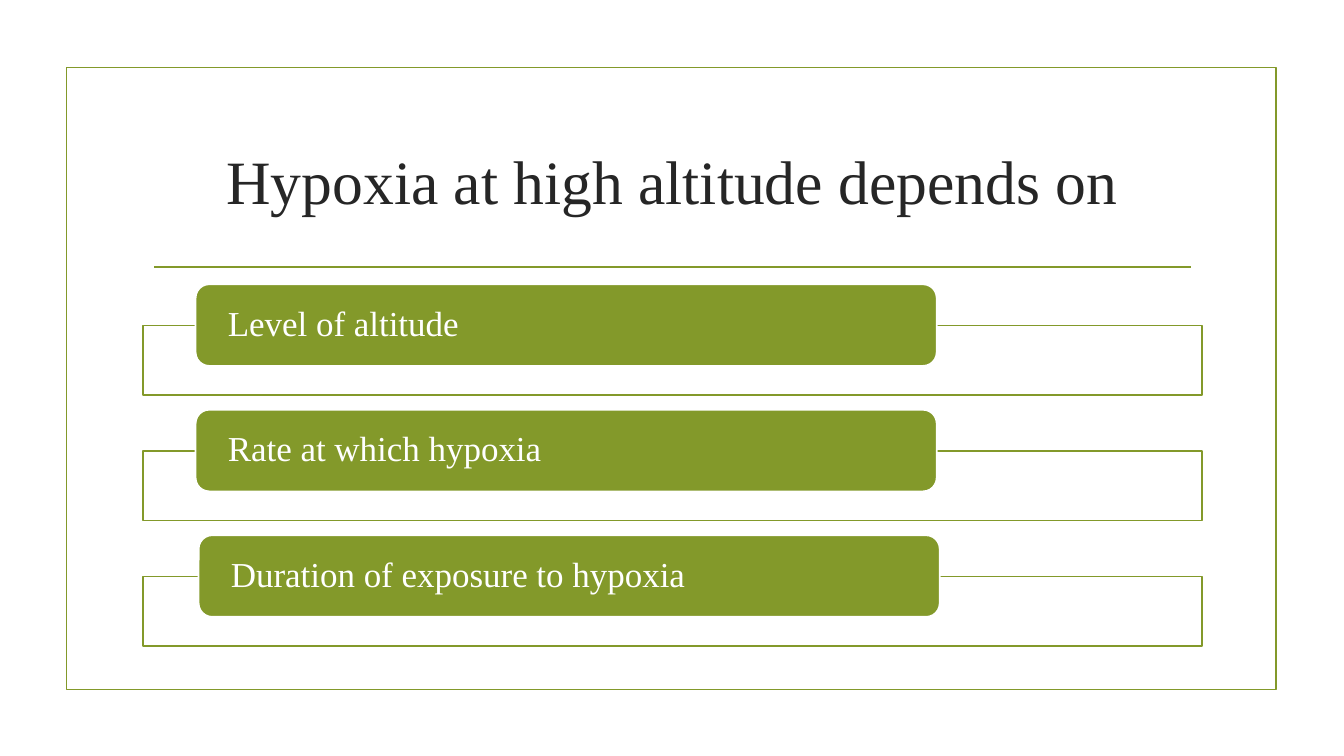
from dataclasses import dataclass

from lxml import etree
from pptx import Presentation
from pptx.dml.color import RGBColor
from pptx.enum import shapes, text
from pptx.oxml import ns
from pptx.util import Inches, Pt


@dataclass(frozen=True)
class Theme:
    """Colours, font and sizes of the slide."""
    green: RGBColor = RGBColor(0x83, 0x99, 0x2A)
    white: RGBColor = RGBColor(0xFF, 0xFF, 0xFF)
    ink: RGBColor = RGBColor(0x26, 0x26, 0x26)
    font: str = "Times New Roman"
    title_size: float = 44
    factor_size: float = 25
    line_width: float = 1.25


THEME = Theme()
CONTENT_LEFT, CONTENT_WIDTH = 1.42, 10.5
FIRST_TOP, ROW_PITCH = 2.82, 1.245
FACTORS = [
    ("Level of altitude", 1.94),
    ("Rate at which hypoxia", 1.94),
    ("Duration of exposure to hypoxia", 1.97),
]


def add_box(slide, kind, left, top, width, height, line, fill=None):
    """Add an outlined preset shape, filled if a colour is given."""
    shape = slide.shapes.add_shape(
        kind, Inches(left), Inches(top), Inches(width), Inches(height))
    shape.shadow.inherit = False
    shape.line.color.rgb = line
    shape.line.width = Pt(THEME.line_width)
    if fill is None:
        shape.fill.background()
    else:
        shape.fill.solid()
        shape.fill.fore_color.rgb = fill
    return shape


def set_opacity(shape, percent):
    """Make the solid fill of a shape partly transparent."""
    color = shape.fill._xPr.find(ns.qn("a:solidFill"))[0]
    etree.SubElement(color, ns.qn("a:alpha"), val=str(percent * 1000))


def write(shape, words, size, color, alignment):
    """Write one vertically centred paragraph into a shape."""
    frame = shape.text_frame
    frame.word_wrap = True
    frame.auto_size = text.MSO_AUTO_SIZE.NONE
    frame.vertical_anchor = text.MSO_ANCHOR.MIDDLE
    paragraph = frame.paragraphs[0]
    paragraph.alignment = alignment
    run = paragraph.add_run()
    run.text = words
    run.font.name = THEME.font
    run.font.size = Pt(size)
    run.font.color.rgb = color
    return paragraph


def add_title(slide, words):
    """Place and fill the title placeholder."""
    title = slide.shapes.title
    title.left, title.top = Inches(CONTENT_LEFT), Inches(1.07)
    title.width, title.height = Inches(CONTENT_WIDTH), Inches(1.43)
    write(title, words, THEME.title_size, THEME.ink, text.PP_ALIGN.CENTER)


def add_rule(slide, left, right, top):
    """Draw a horizontal green line."""
    rule = slide.shapes.add_connector(
        shapes.MSO_CONNECTOR.STRAIGHT,
        Inches(left), Inches(top), Inches(right), Inches(top))
    rule.line.color.rgb = THEME.green
    rule.line.width = Pt(THEME.line_width)
    etree.SubElement(rule._element.spPr, ns.qn("a:effectLst"))


def add_factor(slide, words, left, top):
    """Add a labelled green bar overlapping its outlined panel."""
    panel = add_box(slide, shapes.MSO_SHAPE.RECTANGLE, CONTENT_LEFT, top + 0.41,
                    CONTENT_WIDTH, 0.69, THEME.green, THEME.white)
    set_opacity(panel, 90)
    bar = add_box(slide, shapes.MSO_SHAPE.ROUNDED_RECTANGLE, left, top,
                  7.35, 0.81, THEME.white, THEME.green)
    frame = bar.text_frame
    frame.margin_left = frame.margin_right = Inches(0.28)
    frame.margin_top = frame.margin_bottom = 0
    paragraph = write(bar, words, THEME.factor_size, THEME.white,
                      text.PP_ALIGN.LEFT)
    paragraph.line_spacing = 0.9


def main():
    """Build and save the slide."""
    presentation = Presentation()
    presentation.slide_width = Inches(13.33)
    presentation.slide_height = Inches(7.5)
    slide = presentation.slides.add_slide(presentation.slide_layouts[5])
    add_box(slide, shapes.MSO_SHAPE.RECTANGLE, 0.66, 0.67, 12, 6.17, THEME.green)
    add_rule(slide, 1.53, 11.81, 2.65)
    add_title(slide, "Hypoxia at high altitude depends on")
    for row, (words, left) in enumerate(FACTORS):
        add_factor(slide, words, left, FIRST_TOP + row * ROW_PITCH)
    presentation.save("out.pptx")


if __name__ == "__main__":
    main()
